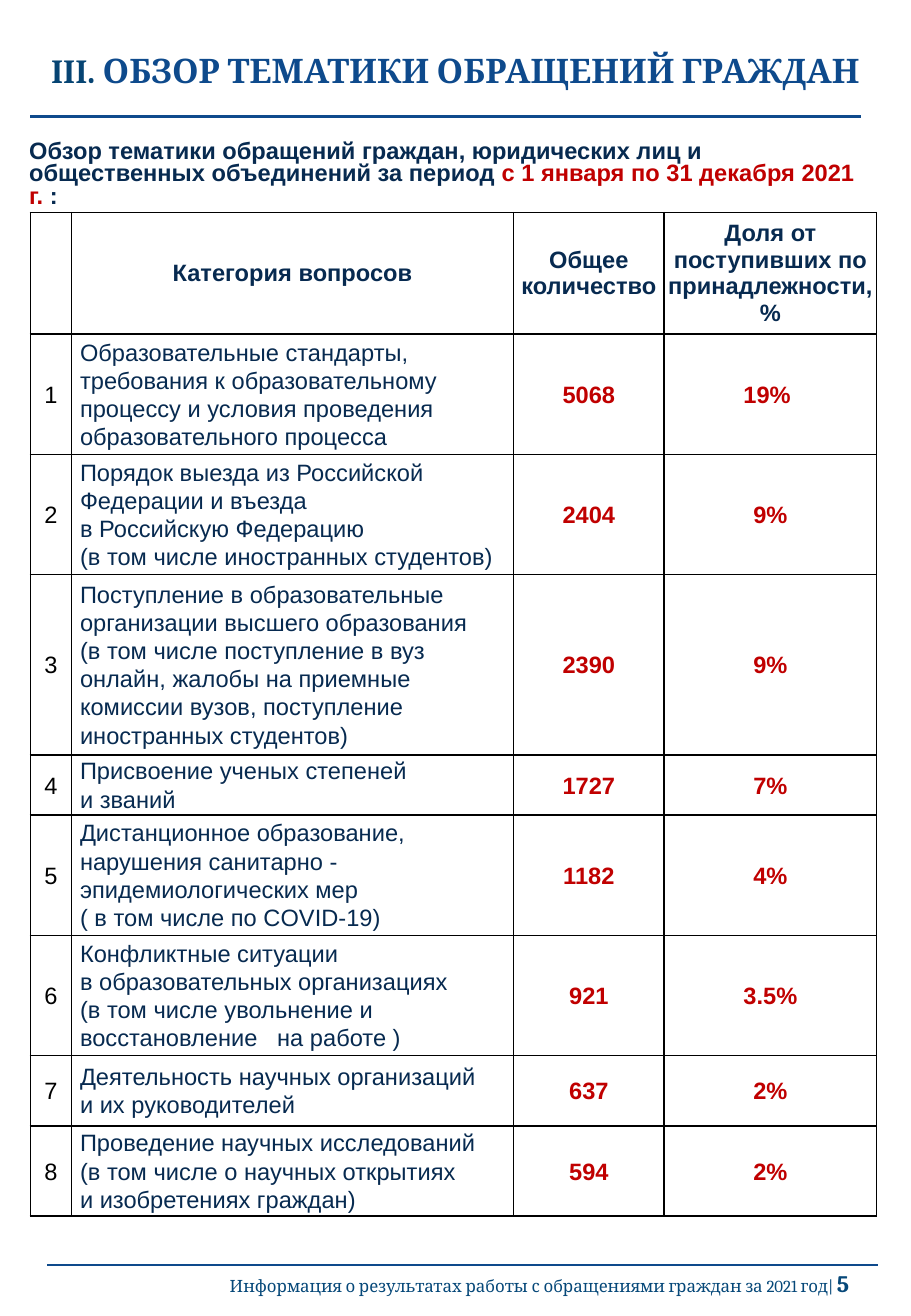
from dataclasses import dataclass
from lxml.etree import SubElement
from pptx import Presentation
from pptx.dml.color import RGBColor as Color
from pptx.enum.text import MSO_ANCHOR as Anchor, MSO_AUTO_SIZE as Fit, PP_ALIGN as Align
from pptx.oxml import parse_xml
from pptx.oxml.ns import nsdecls, qn
from pptx.util import Inches, Pt

# Content
TITLE = [("III. ", "teal"), ("ОБЗОР ТЕМАТИКИ ОБРАЩЕНИЙ ГРАЖДАН", "blue")]
INTRO = [
    ("Обзор тематики обращений граждан, юридических лиц и "
     "общественных объединений за период ", "navy"),
    ("с 1 января по 31 декабря 2021 г. ", "red"),
    (":", "navy"),
]
FOOTER = "Информация о результатах работы с обращениями граждан за 2021 год| "
PAGE = "5"
HEADS = ["", "Категория вопросов", "Общее количество",
         "Доля от поступивших по принадлежности, %"]
# Each topic: paragraphs, total, share, row height in text lines
TOPICS = [
    (["Образовательные стандарты, требования к образовательному процессу "
      "и условия проведения образовательного процесса"], "5068", "19% ", 4),
    (["Порядок выезда из Российской Федерации и въезда \nв Российскую Федерацию",
      "(в том числе иностранных студентов)"], "2404", "9%", 4),
    (["Поступление в образовательные организации высшего образования",
      "(в том числе поступление в вуз онлайн, жалобы на приемные комиссии вузов, "
      "поступление иностранных студентов)"], "2390", "9%", 6),
    (["Присвоение ученых степеней\nи званий"], "1727", "7%", 2),
    (["Дистанционное образование, нарушения санитарно - эпидемиологических мер "
      "\n( в том числе по COVID-19)"], "1182", "4%", 4),
    (["Конфликтные ситуации \nв образовательных организациях",
      "(в том числе увольнение и восстановление   на работе )"], "921", "3.5%", 4),
    (["Деятельность научных организаций \nи их руководителей"], "637", "2%", 2.35),
    (["Проведение научных исследований\n(в том числе о научных открытиях"
      "\nи изобретениях граждан)"], "594", "2%", 3),
]


@dataclass
class Theme:
    teal = Color.from_string("064473")
    blue = Color.from_string("0E4A8C")
    foot = Color.from_string("064879")
    navy = Color.from_string("072A50")
    red = Color.from_string("C00000")
    black = Color.from_string("000000")
    serif, sans = "Cambria", "Arial"
    big, mid, small = Pt(20), Pt(14), Pt(10)
    rule = Pt(1.5)


# Layout, in percent of the slide
WIDE, HIGH = Inches(7.5), Inches(10.83)
TITLE_BOX = (0, 3.32, 100, 4.43)
INTRO_BOX = (1.87, 10.25, 96.4, 4.43)
FOOT_BOX = (18.13, 96.4, 76.4, 2.68)
RULES = [(3.33, 8.86), (5.2, 96.12)]
RULE_LEN = 91.2
GRID_AT = (3.33, 16.16)
COLS = [4.53, 48.53, 16.53, 23.33]
LINE = 2.28
HEAD_LINES = 4.05


def across(share):
    return int(WIDE * share / 100)


def down(share):
    return int(HIGH * share / 100)


def place(shape, box):
    shape.left, shape.width = across(box[0]), across(box[2])
    shape.top, shape.height = down(box[1]), down(box[3])


def style(font, name, size, bold, color=None):
    font.name, font.size, font.bold = name, size, bold
    if color is not None:
        font.color.rgb = color


def add_runs(para, parts):
    for text, tone in parts:
        run = para.add_run()
        run.text = text
        run.font.color.rgb = getattr(Theme, tone)


def set_para(para, align, gap):
    para.alignment, para.line_spacing = align, gap
    para.space_before = Pt(0)


def fill_cell(cell, texts, color, bold, align, gap, inset):
    props = cell._tc.get_or_add_tcPr()
    for side in ("lnL", "lnR", "lnT", "lnB"):
        props.append(parse_xml(
            f'<a:{side} {nsdecls("a")} w="12700"><a:solidFill>'
            f'<a:srgbClr val="{Theme.black}"/></a:solidFill></a:{side}>'))
    cell.fill.background()
    cell.vertical_anchor = Anchor.MIDDLE
    cell.margin_left = cell.margin_right = Inches(inset)
    cell.margin_top = cell.margin_bottom = 0
    frame = cell.text_frame
    for i, text in enumerate(texts):
        para = frame.paragraphs[0] if i == 0 else frame.add_paragraph()
        para.text = text
        set_para(para, align, gap)
        style(para.font, Theme.sans, Theme.mid, bold, color)


def add_heads(slide):
    title, intro = slide.shapes.title, slide.placeholders[1]
    place(title, TITLE_BOX)
    place(intro, INTRO_BOX)
    for shape, anchor in ((title, Anchor.MIDDLE), (intro, Anchor.TOP)):
        shape.text_frame.auto_size = Fit.NONE
        shape.text_frame.word_wrap = True
        shape.text_frame.vertical_anchor = anchor
    para = title.text_frame.paragraphs[0]
    set_para(para, Align.CENTER, 0.9)
    style(para.font, Theme.serif, Theme.big, True)
    add_runs(para, TITLE)
    para = intro.text_frame.paragraphs[0]
    set_para(para, Align.LEFT, 0.8)
    style(para.font, Theme.sans, Theme.mid, True)
    add_runs(para, INTRO)
    # No bullet or indent on the intro
    props = para._p.get_or_add_pPr()
    props.set("marL", "0")
    props.set("indent", "0")
    mark = parse_xml(f'<a:buNone {nsdecls("a")}/>')
    props.insert(list(props).index(props.find(qn("a:defRPr"))), mark)


def add_rules(slide):
    for x, y in RULES:
        rule = slide.shapes.add_connector(
            1, across(x), down(y), across(x + RULE_LEN), down(y))
        rule.line.color.rgb, rule.line.width = Theme.blue, Theme.rule
        SubElement(rule._element.spPr, qn("a:effectLst"))


def add_footer(slide):
    box = slide.shapes.add_textbox(0, 0, 0, 0)
    place(box, FOOT_BOX)
    box.text_frame.word_wrap = True
    para = box.text_frame.paragraphs[0]
    set_para(para, Align.RIGHT, 0.8)
    add_runs(para, [(FOOTER, "foot"), (PAGE, "foot")])
    note, page = para.runs
    style(note.font, Theme.serif, Theme.small, False)
    style(page.font, Theme.serif, Theme.mid, True)


def add_grid(slide):
    lines = [HEAD_LINES] + [topic[-1] for topic in TOPICS]
    grid = slide.shapes.add_table(
        len(lines), len(COLS), across(GRID_AT[0]), down(GRID_AT[1]),
        across(sum(COLS)), down(sum(lines) * LINE)).table
    grid.first_row = grid.horz_banding = False
    for col, share in zip(grid.columns, COLS):
        col.width = across(share)
    for row, count in zip(grid.rows, lines):
        row.height = down(count * LINE)
    for c, head in enumerate(HEADS):
        fill_cell(grid.cell(0, c), [head], Theme.navy, True, Align.CENTER, 1.0, 0.03)
    for r, (topic, total, share, _) in enumerate(TOPICS, 1):
        looks = [
            ([str(r)], Theme.black, False, Align.CENTER, 1.07),
            (topic, Theme.navy, False, Align.LEFT, 1.06),
            ([total], Theme.red, True, Align.CENTER, 1.06),
            ([share], Theme.red, True, Align.CENTER, 1.06),
        ]
        for c, look in enumerate(looks):
            fill_cell(grid.cell(r, c), *look, 0.07)


def main():
    deck = Presentation()
    deck.slide_width, deck.slide_height = WIDE, HIGH
    slide = deck.slides.add_slide(deck.slide_layouts[1])
    add_heads(slide)
    add_rules(slide)
    add_footer(slide)
    add_grid(slide)
    deck.save("out.pptx")


if __name__ == "__main__":
    main()
